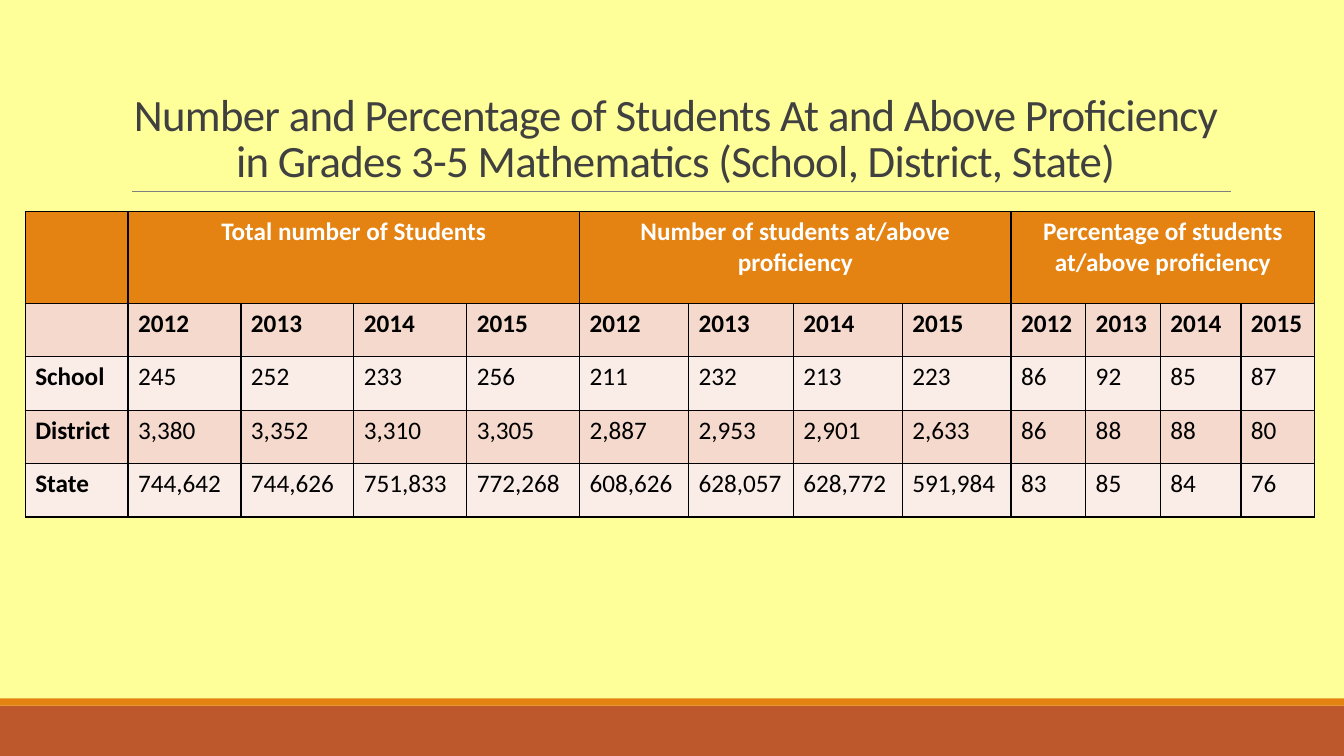
from lxml import etree
from pptx import Presentation
from pptx import util as u
from pptx.dml.color import RGBColor
from pptx.enum import shapes, text
from pptx.oxml.ns import qn

TITLE = ("Number and Percentage of Students At and Above Proficiency "
         "in Grades 3-5 Mathematics (School, District, State)")
GROUPS = ["Total number of Students",
          "Number of students at/above proficiency",
          "Percentage of students at/above proficiency"]
YEARS = ["2012", "2013", "2014", "2015"]
RESULTS = [
    ("School", "245", "252", "233", "256", "211", "232", "213", "223",
     "86", "92", "85", "87"),
    ("District", "3,380", "3,352", "3,310", "3,305", "2,887", "2,953", "2,901", "2,633",
     "86", "88", "88", "80"),
    ("State", "744,642", "744,626", "751,833", "772,268",
     "608,626", "628,057", "628,772", "591,984", "83", "85", "84", "76"),
]
COLORS = dict(page="FFFF99", footer="BD582C", accent="E48312", rule="808080",
              title="404040", header_text="FFFFFF", body_text="000000",
              border="000000", dark_band="F5D9CC", light_band="FAEDE7")
FONT = "Calibri"
WIDTH, HEIGHT = 13.33, 7.5
FOOTER_H, STRIPE_H = 0.5, 0.07
TABLE_LEFT, TABLE_TOP = 0.25, 2.1
COL_WIDTHS = [1.02] + [1.12] * 4 + [1.08, 1.04, 1.08, 1.08, 0.74, 0.74, 0.8, 0.73]
ROW_HEIGHTS = [0.91] + [0.53] * 4


def rgb(name):
    return RGBColor.from_string(COLORS[name])


def style(p, size, color, bold=False):
    for r in p.runs:
        r.font.name, r.font.size, r.font.bold = FONT, u.Pt(size), bold
        r.font.color.rgb = rgb(color)


def add_band(slide, top, height, color):
    sp = slide.shapes.add_shape(shapes.MSO_SHAPE.RECTANGLE, 0, u.Inches(top),
                                u.Inches(WIDTH), u.Inches(height))
    sp.shadow.inherit = False
    sp.fill.solid()
    sp.fill.fore_color.rgb = rgb(color)
    sp.line.fill.background()


def add_borders(cell):
    tcPr = cell._tc.get_or_add_tcPr()
    for i, side in enumerate(("lnL", "lnR", "lnT", "lnB")):
        ln = etree.Element(qn("a:" + side), w=str(u.Pt(1)))
        fill = etree.SubElement(ln, qn("a:solidFill"))
        etree.SubElement(fill, qn("a:srgbClr"), val=COLORS["border"])
        tcPr.insert(i, ln)  # borders come before the fill


def add_title(slide):
    sp = slide.shapes.add_textbox(u.Inches(1.2), u.Inches(0.31),
                                  u.Inches(11), u.Inches(1.59))
    tf = sp.text_frame
    tf.word_wrap = True
    tf.vertical_anchor = text.MSO_ANCHOR.BOTTOM
    p = tf.paragraphs[0]
    p.text = TITLE
    p.alignment = text.PP_ALIGN.CENTER
    p.line_spacing = 0.85
    style(p, 32, "title")
    p.runs[0].font._element.set("spc", "-50")


def add_results(slide):
    n = len(YEARS)
    header = [""] * len(COL_WIDTHS)
    header[1::n] = GROUPS
    rows = [header, [""] + YEARS * len(GROUPS)] + RESULTS
    table = slide.shapes.add_table(
        len(rows), len(COL_WIDTHS), u.Inches(TABLE_LEFT), u.Inches(TABLE_TOP),
        u.Inches(sum(COL_WIDTHS)), u.Inches(sum(ROW_HEIGHTS))).table
    for col, width in zip(table.columns, COL_WIDTHS):
        col.width = u.Inches(width)
    for row, height in zip(table.rows, ROW_HEIGHTS):
        row.height = u.Inches(height)

    for i, values in enumerate(rows):
        band = "accent" if i == 0 else "dark_band" if i % 2 else "light_band"
        for j, value in enumerate(values):
            cell = table.cell(i, j)
            cell.fill.solid()
            cell.fill.fore_color.rgb = rgb(band)
            add_borders(cell)
            p = cell.text_frame.paragraphs[0]
            p.text = value
            if i == 0:
                p.alignment = text.PP_ALIGN.CENTER
            style(p, 18, "body_text" if i else "header_text", bold=i < 2 or j == 0)

    # Each group heading spans its years
    for j in range(1, len(COL_WIDTHS), n):
        table.cell(0, j).merge(table.cell(0, j + n - 1))


def main():
    prs = Presentation()
    prs.slide_width, prs.slide_height = u.Inches(WIDTH), u.Inches(HEIGHT)
    slide = prs.slides.add_slide(prs.slide_layouts[6])
    slide.background.fill.solid()
    slide.background.fill.fore_color.rgb = rgb("page")

    # Footer bands
    footer_top = HEIGHT - FOOTER_H
    add_band(slide, footer_top, FOOTER_H, "footer")
    add_band(slide, footer_top - STRIPE_H, STRIPE_H, "accent")

    # Rule under the title
    rule = slide.shapes.add_connector(shapes.MSO_CONNECTOR.STRAIGHT, u.Inches(1.31),
                                      u.Inches(1.9), u.Inches(12.21), u.Inches(1.9))
    rule.line.color.rgb = rgb("rule")
    rule.line.width = u.Pt(0.5)
    etree.SubElement(rule._element.spPr, qn("a:effectLst"))

    add_title(slide)
    add_results(slide)
    prs.save("out.pptx")


if __name__ == "__main__":
    main()
